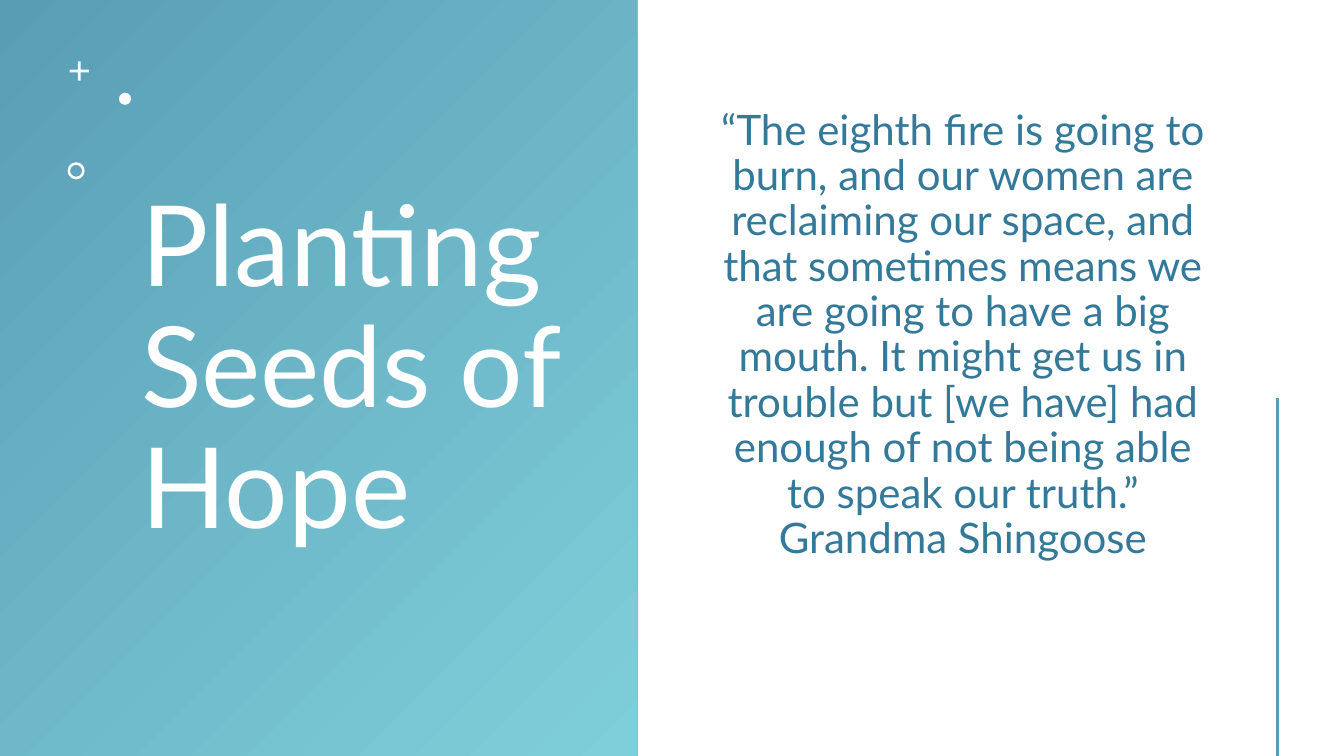
"""Build a quote slide with a gradient title panel and a large quotation."""
import pptx
import pptx.util
import pptx.dml.color
import pptx.enum.shapes
import pptx.enum.text
import pptx.oxml.ns
import lxml.etree

MSO = pptx.enum.shapes.MSO_SHAPE
ALIGN = pptx.enum.text.PP_ALIGN
ANCHOR = pptx.enum.text.MSO_ANCHOR
qn = pptx.oxml.ns.qn
WHITE, DEEP, PALE, INK = "FFFFFF", "599DB5", "7FCFDA", "337999"


def color(value):
    return pptx.dml.color.RGBColor.from_string(value)


def place(sp, *box):
    sp.left, sp.top, sp.width, sp.height = [pptx.util.Inches(v) for v in box]


prs = pptx.Presentation()
prs.slide_width = pptx.util.Inches(13.33)
prs.slide_height = pptx.util.Inches(7.5)
s = prs.slides.add_slide(prs.slide_layouts[1])
title, body = s.placeholders

panel = s.shapes.add_shape(MSO.RECTANGLE, 0, 0, pptx.util.Inches(6.32), prs.slide_height)
panel.shadow.inherit = False
panel.line.fill.background()
panel.fill.gradient()
panel.fill.gradient_angle = 315
for stop, value in zip(panel.fill.gradient_stops, (DEEP, PALE)):
    stop.color.rgb = color(value)
title._element.addprevious(panel._element)

place(title, 1.3, 0.42, 4.38, 6.53)
place(body, 6.94, 1.03, 5.22, 4.6)
quote = (
    "“The eighth fire is going to burn, and our women are reclaiming our space, "
    "and that sometimes means we are going to have a big mouth. It might get us "
    "in trouble but [we have] had enough of not being able to speak our truth.” "
    "Grandma Shingoose"
)
for sp, text, size, value, align, anchor in (
    (title, "Planting Seeds of Hope", 80, WHITE, ALIGN.LEFT, ANCHOR.MIDDLE),
    (body, quote, 30, INK, ALIGN.CENTER, ANCHOR.TOP),
):
    tf = sp.text_frame
    tf.word_wrap = True
    tf.auto_size = pptx.enum.text.MSO_AUTO_SIZE.NONE
    tf.vertical_anchor = anchor
    p = tf.paragraphs[0]
    p.alignment = align
    p.line_spacing = 0.9
    p.space_before = pptx.util.Pt(0)
    r = p.add_run()
    r.text = text
    r.font.name = "Lato"
    r.font.size = pptx.util.Pt(size)
    r.font.color.rgb = color(value)

pPr = body.text_frame.paragraphs[0]._p.get_or_add_pPr()
pPr.set("marL", "0")
pPr.set("indent", "0")
lxml.etree.SubElement(pPr, qn("a:buNone"))

marks = s.shapes.add_group_shape()
for kind, left, top, side, adjust in (
    (MSO.CROSS, 0.69, 0.61, 0.19, 0.43),
    (MSO.OVAL, 1.18, 0.92, 0.12, None),
    (MSO.DONUT, 0.67, 1.61, 0.17, 0.15),
):
    sp = marks.shapes.add_shape(kind, 0, 0, 0, 0)
    place(sp, left, top, side, side)
    sp.shadow.inherit = False
    sp.fill.solid()
    sp.fill.fore_color.rgb = color(WHITE)
    sp.line.fill.background()
    if adjust:
        sp.adjustments[0] = adjust

x = pptx.util.Inches(12.67)
rule = s.shapes.add_connector(
    pptx.enum.shapes.MSO_CONNECTOR.STRAIGHT,
    x, pptx.util.Inches(3.95), x, prs.slide_height,
)
rule.line.color.rgb = color(DEEP)
rule.line.width = pptx.util.Pt(2)
lxml.etree.SubElement(rule._element.spPr, qn("a:effectLst"))

prs.save("out.pptx")
